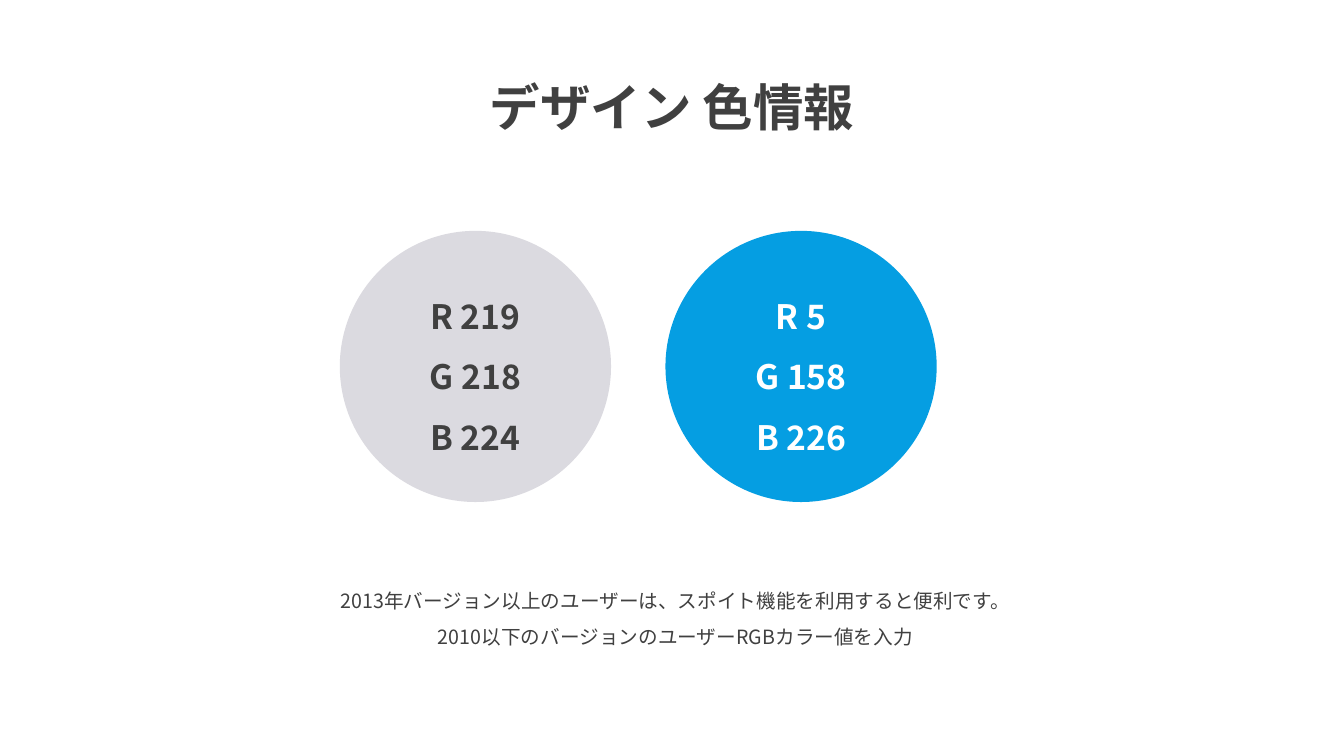
from lxml import etree
from pptx import Presentation
from pptx.dml.color import RGBColor
from pptx.enum import shapes, text
from pptx.oxml import ns
from pptx.util import Inches, Pt

FONT = "Noto Sans CJK KR"
COLORS = {"dark": "404040", "white": "FFFFFF", "gray": "DBDAE0", "blue": "059EE2"}


def write_lines(box, lines, size, color, bold, anchor):
    frame = box.text_frame
    frame.word_wrap = True
    frame.auto_size = text.MSO_AUTO_SIZE.NONE
    frame.vertical_anchor = anchor
    for index, line in enumerate(lines):
        para = frame.add_paragraph() if index else frame.paragraphs[0]
        para.alignment = text.PP_ALIGN.CENTER
        para.line_spacing = 1.5
        para.space_before = Pt(0)
        span = para.add_run()
        span.text = line
        span.font.size = Pt(size)
        span.font.bold = bold
        span.font.color.rgb = RGBColor.from_string(COLORS[color])
        span.font.name = FONT
        # Japanese characters take the East Asian typeface
        east_asian = etree.SubElement(span.font._element, ns.qn("a:ea"))
        east_asian.set("typeface", FONT)


deck = Presentation()
deck.slide_width, deck.slide_height = Inches(13.33), Inches(7.5)
page = deck.slides.add_slide(deck.slide_layouts[5])

# Title
title = page.shapes.title
title.left, title.top = Inches(4.24), Inches(0.4)
title.width, title.height = Inches(4.85), Inches(0.91)
write_lines(title, ["デザイン 色情報"], 36, "dark", True, text.MSO_ANCHOR.TOP)

# Colour circles, labelled with their own RGB values
diameter = Inches(2.69)
for left, fill, ink in [(3.37, "gray", "dark"), (6.6, "blue", "white")]:
    circle = page.shapes.add_shape(
        shapes.MSO_SHAPE.OVAL, Inches(left), Inches(2.29), diameter, diameter)
    circle.shadow.inherit = False
    rgb = RGBColor.from_string(COLORS[fill])
    circle.fill.solid()
    circle.fill.fore_color.rgb = rgb
    circle.line.fill.background()
    labels = [f"{channel} {value}" for channel, value in zip("RGB", rgb)]
    write_lines(circle, labels, 24, ink, True, text.MSO_ANCHOR.MIDDLE)

# Note on how to pick the colours
note = page.shapes.add_textbox(Inches(2.52), Inches(5.68), Inches(8.36), Inches(0.77))
note_lines = ["2013年バージョン以上のユーザーは、スポイト機能を利用すると便利です。",
              "2010以下のバージョンのユーザーRGBカラー値を入力"]
write_lines(note, note_lines, 14, "dark", False, text.MSO_ANCHOR.TOP)

deck.save("out.pptx")
